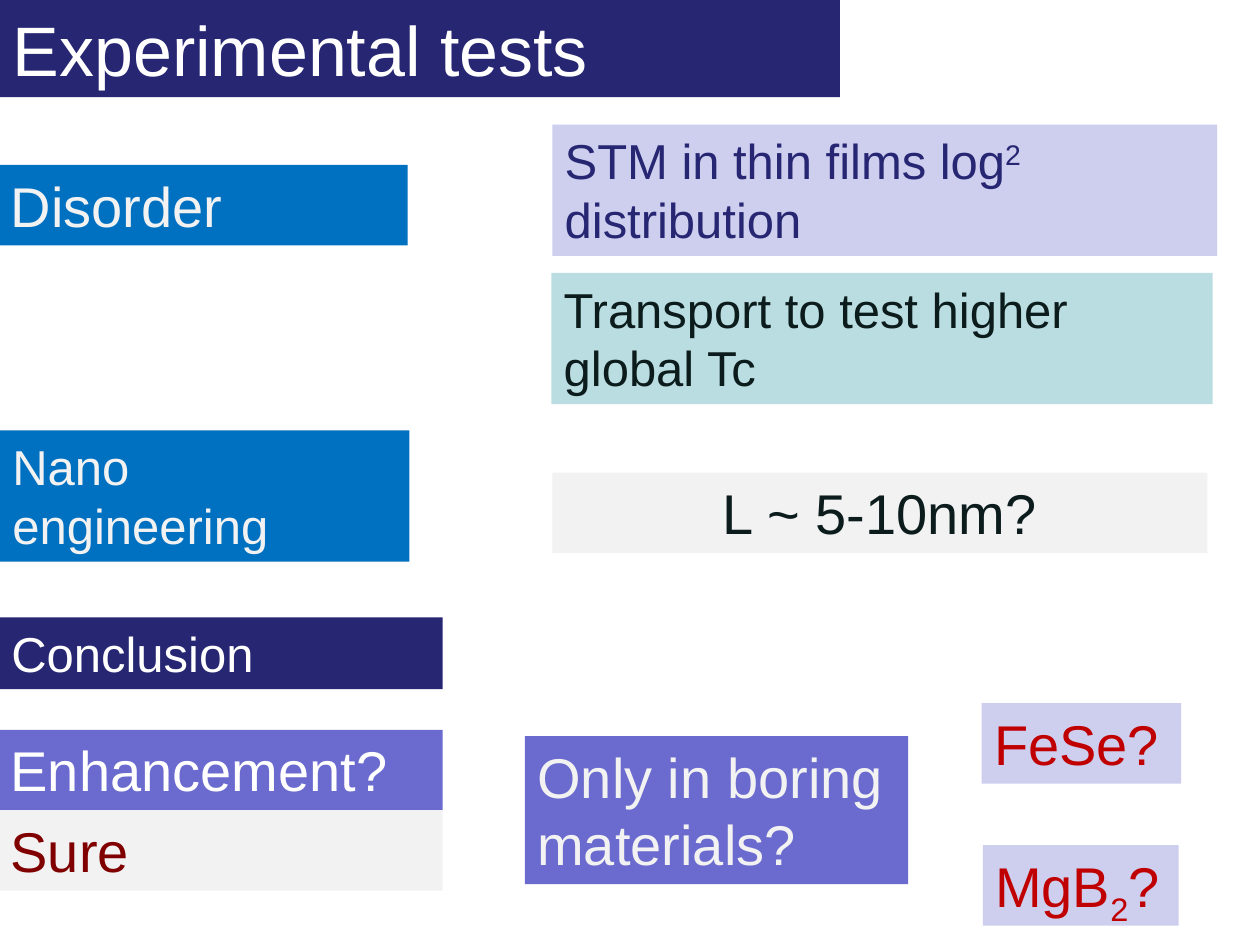
from pptx import Presentation
from pptx.dml.color import RGBColor
from pptx.enum import shapes, text
from pptx.util import Pt

NAVY = RGBColor(0x26, 0x26, 0x73)
BLUE = RGBColor(0x00, 0x70, 0xC0)
VIOLET = RGBColor(0x6B, 0x6B, 0xCF)
LAVENDER = RGBColor(0xCE, 0xCE, 0xEF)
TEAL = RGBColor(0xBA, 0xDD, 0xE1)
GREY = RGBColor(0xF2, 0xF2, 0xF2)
WHITE = RGBColor(0xFF, 0xFF, 0xFF)
INK = RGBColor(0x0C, 0x1C, 0x1D)
RED = RGBColor(0xC0, 0x00, 0x00)
MAROON = RGBColor(0x80, 0x00, 0x00)

SUPER, SUB = 30000, -25000  # baseline shift, thousandths of a percent
LEFT, CENTER = text.PP_ALIGN.LEFT, text.PP_ALIGN.CENTER

# Content: runs of (wording, baseline), box in points, fill, colour, size, alignment
TITLE = ([("Experimental tests", 0)], (0, 0, 480, 55.5), NAVY, WHITE, 40, LEFT)
BOXES = [
    # Tests and what to measure
    ([("Disorder", 0)], (-1, 94.2, 234, 46), BLUE, GREY, 32, LEFT),
    ([("STM in thin films log", 0), ("2", SUPER), (" distribution", 0)],
     (315.6, 71.2, 380, 75), LAVENDER, NAVY, 28, LEFT),
    ([("Transport to test higher global Tc", 0)],
     (315, 156, 378, 75), TEAL, INK, 28, LEFT),
    ([("Nano engineering", 0)], (0, 246, 234, 75), BLUE, GREY, 28, LEFT),
    ([("L ~ 5-10nm?", 0)], (315.6, 270, 374.4, 46), GREY, INK, 32, CENTER),
    # Conclusion
    ([("Conclusion", 0)], (-0.6, 352.8, 253.5, 41), NAVY, WHITE, 28, LEFT),
    ([("Enhancement?", 0)], (-1, 417, 254, 46), VIOLET, WHITE, 32, LEFT),
    ([("Sure", 0)], (-1, 463, 254, 46), GREY, MAROON, 32, LEFT),
    ([("Only in boring materials?", 0)],
     (300, 420.6, 219, 84.7), VIOLET, GREY, 32, LEFT),
    ([("FeSe?", 0)], (561, 401.8, 114, 46), LAVENDER, RED, 32, LEFT),
    ([("MgB", 0), ("2", SUB), ("?", 0)],
     (561.6, 483, 112, 46), LAVENDER, RED, 32, LEFT),
]


def fill_label(label, runs, box, fill, color, size, align):
    label.left, label.top, label.width, label.height = map(Pt, box)
    label.fill.solid()
    label.fill.fore_color.rgb = fill
    label.line.fill.background()

    frame = label.text_frame
    frame.word_wrap = True
    frame.auto_size = text.MSO_AUTO_SIZE.NONE
    frame.vertical_anchor = text.MSO_ANCHOR.TOP
    frame.margin_left = frame.margin_right = Pt(7.2)
    frame.margin_top = frame.margin_bottom = Pt(3.6)

    paragraph = frame.paragraphs[0]
    paragraph.alignment = align
    paragraph.line_spacing = 1.0
    paragraph.space_before = Pt(0)
    paragraph.font.name = "Arial"
    paragraph.font.size = Pt(size)
    paragraph.font.color.rgb = color
    for wording, baseline in runs:
        run = paragraph.add_run()
        run.text = wording
        if baseline:
            run._r.get_or_add_rPr().set("baseline", str(baseline))


def main():
    deck = Presentation()
    deck.slide_width, deck.slide_height = Pt(720), Pt(540)
    slide = deck.slides.add_slide(deck.slide_layouts[5])

    # Title
    fill_label(slide.shapes.title, *TITLE)

    # Coloured labels
    for box in BOXES:
        label = slide.shapes.add_shape(shapes.MSO_SHAPE.RECTANGLE, 0, 0, 0, 0)
        label.shadow.inherit = False
        fill_label(label, *box)

    deck.save("out.pptx")


if __name__ == "__main__":
    main()
